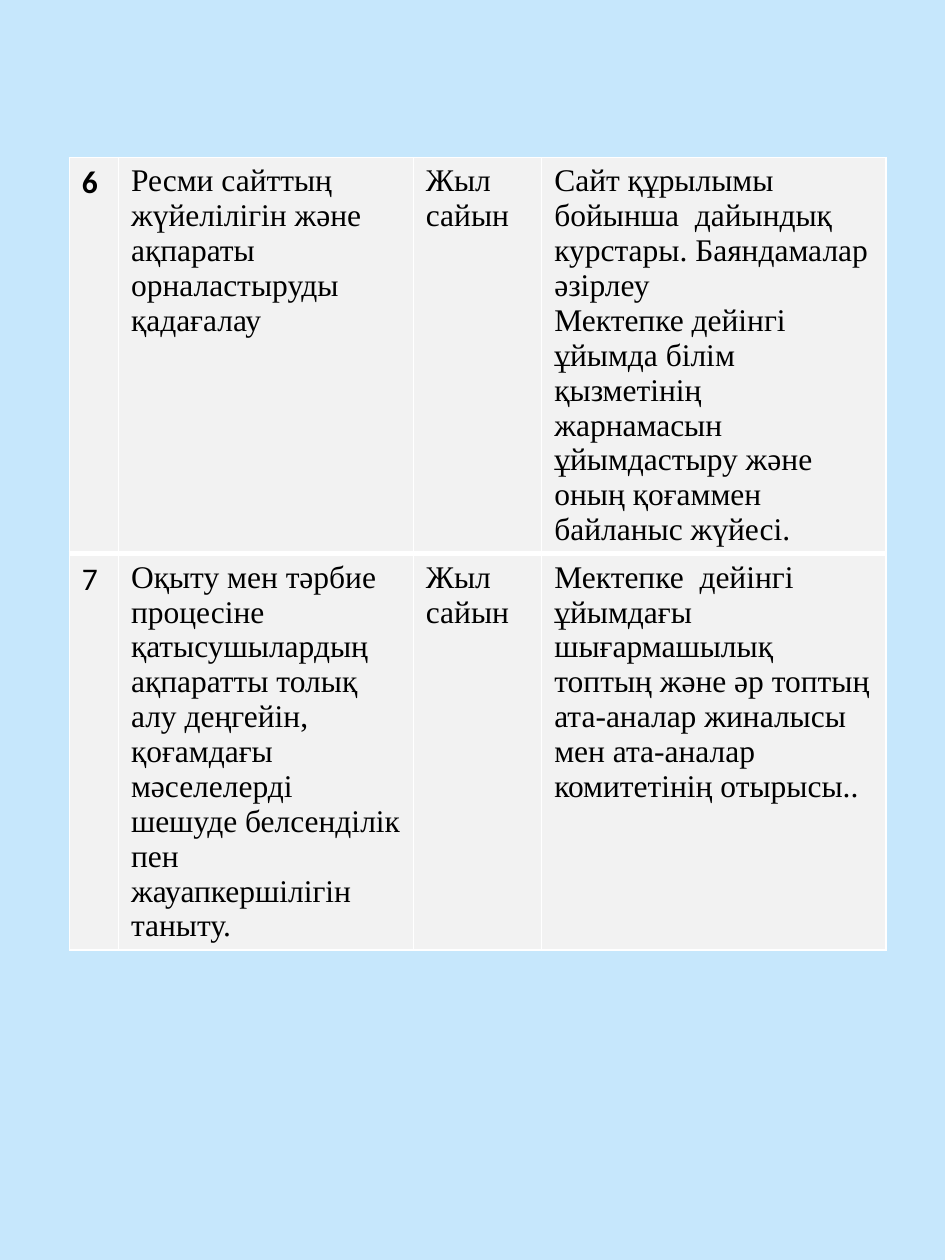
from lxml import etree
from pptx import Presentation, util as u
from pptx.dml.color import RGBColor
from pptx.oxml import ns

BACKGROUND = RGBColor(0xC6, 0xE7, 0xFC)
CELL_FILL = RGBColor(0xF2, 0xF2, 0xF2)
BORDER = RGBColor(0xFF, 0xFF, 0xFF)
INK = RGBColor(0, 0, 0)

NUMBER_FONT = "Calibri"
BODY_FONT = "Times New Roman"
COLUMN_WIDTHS = [28.1, 168.5, 73.4, 196.6]
MINIMUM_ROW_HEIGHT = 29.5  # rows grow to fit their text

TASKS = [
    [
        "6",
        "Ресми сайттың жүйелілігін және ақпараты орналастыруды қадағалау",
        "Жыл сайын",
        "Сайт құрылымы бойынша  дайындық курстары. Баяндамалар әзірлеу\n"
        "Мектепке дейінгі ұйымда білім қызметінің жарнамасын "
        "ұйымдастыру және оның қоғаммен байланыс жүйесі.",
    ],
    [
        "7",
        "Оқыту мен тәрбие процесіне қатысушылардың ақпаратты толық алу "
        "деңгейін, қоғамдағы мәселелерді шешуде белсенділік пен "
        "жауапкершілігін таныту.",
        "Жыл сайын",
        "Мектепке  дейінгі ұйымдағы  шығармашылық топтың және әр топтың "
        "ата-аналар жиналысы мен ата-аналар комитетінің отырысы..",
    ],
]


def set_borders(cell, top, bottom):
    """Draw all four cell edges; the top and bottom widths are in points."""
    properties = cell._tc.get_or_add_tcPr()
    widths = {"lnL": 1, "lnR": 1, "lnT": top, "lnB": bottom}
    for index, (edge, width) in enumerate(widths.items()):
        line = etree.Element(ns.qn(f"a:{edge}"), w=str(u.Pt(width)))
        fill = etree.SubElement(line, ns.qn("a:solidFill"))
        etree.SubElement(fill, ns.qn("a:srgbClr"), val=str(BORDER))
        properties.insert(index, line)


def fill_cell(cell, content, font_name, bold):
    cell.fill.solid()
    cell.fill.fore_color.rgb = CELL_FILL
    cell.text_frame.text = content
    for para in cell.text_frame.paragraphs:
        for span in para.runs:
            span.font.name = font_name
            span.font.size = u.Pt(18)
            span.font.bold = bold
            span.font.color.rgb = INK


def add_task_table(page):
    frame = page.shapes.add_table(
        len(TASKS), len(COLUMN_WIDTHS),
        u.Pt(39.6), u.Pt(90), u.Pt(sum(COLUMN_WIDTHS)), u.Pt(489.6))
    table = frame.table
    table.first_row = False
    table.horz_banding = False
    for column, width in zip(table.columns, COLUMN_WIDTHS):
        column.width = u.Pt(width)
    for row_index, task in enumerate(TASKS):
        first = row_index == 0
        row = table.rows[row_index]
        row.height = u.Pt(MINIMUM_ROW_HEIGHT)
        for column_index, content in enumerate(task):
            cell = row.cells[column_index]
            is_number = column_index == 0
            fill_cell(cell, content, NUMBER_FONT if is_number else BODY_FONT,
                      bold=first and is_number)
            set_borders(cell, top=1 if first else 3, bottom=3 if first else 1)
    frame.height = u.Pt(489.6)


def main():
    deck = Presentation()
    deck.slide_width, deck.slide_height = u.Pt(540), u.Pt(720)
    page = deck.slides.add_slide(deck.slide_layouts[6])
    page.background.fill.solid()
    page.background.fill.fore_color.rgb = BACKGROUND
    add_task_table(page)
    deck.save("out.pptx")


if __name__ == "__main__":
    main()
